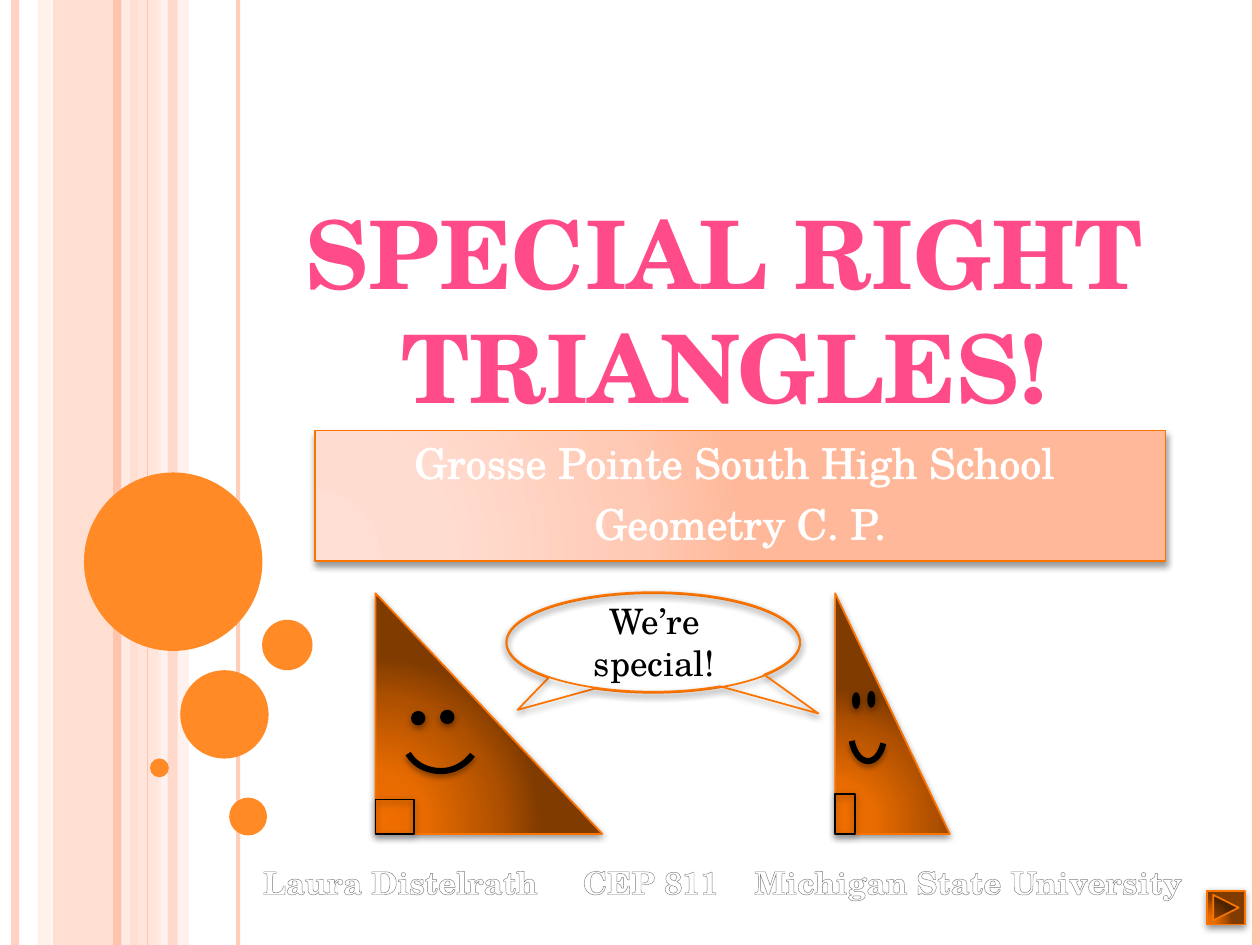
from lxml.etree import SubElement
from pptx import Presentation
from pptx.dml.color import RGBColor
from pptx.enum.shapes import MSO_CONNECTOR, MSO_SHAPE
from pptx.enum.text import MSO_ANCHOR, MSO_AUTO_SIZE, PP_ALIGN
from pptx.oxml import parse_xml
from pptx.oxml.ns import nsdecls, qn
from pptx.util import Pt

FONT = "TeX Gyre Schola"
ORANGE, DISC, BLACK, WHITE = "FB7400", "FF8A26", "000000", "FFFFFF"
HEIGHT = 540

# left, width, colour, opacity in percent
BANDS = [(30.24, 48.24, "FFC4AD", 54), (21.6, 7.92, "FFDACD", 36),
         (77.76, 14.4, "FFDACD", 70), (90, 18, "FFEDE8", 71),
         (95.76, 5.76, "FFC4AD", 51)]
# centre, line width, colour, opacity in percent
STRIPES = [(8.64, 4.5, "FFC4AD", 73), (72, 4.5, "FFEDE8", 83), (66.96, 4.5, "FFC4AD", 100),
           (136.08, 2.25, "FFC4AD", 82), (84.24, 0.75, "FFC4AD", 100),
           (717.84, 4.5, "FFC4AD", 100)]
# left, top, diameter
DISCS = [(48, 270, 102), (103, 383, 50.5), (85.7, 433.4, 10.8),
         (131, 455.8, 21.6), (149.8, 354.2, 28.8)]

PEACH = [(0, "FFDFD4"), (30, "FFDCD0"), (75, "FFCAB5"), (100, "FFB899")]
RUST = [(0, "F06E00"), (30, "E76B00"), (75, "AE5000"), (100, "803B00")]
PINK = [(0, "A40038"), (43, "FF4B89"), (48, "FF347A"), (100, "A40038")]
SILVER = [(0, WHITE), (9, WHITE), (50, "7F7F7F"), (79, WHITE), (100, WHITE)]

# opacity in percent, blur, distance
SOFT, PANEL, SMILE = (42, 4, 1.6), (40, 4, 2), (35, 3, 2)

TITLE = ["SPECIAL RIGHT ", "TRIANGLES!"]
SUBTITLE = ["Grosse Pointe South High School ", " Geometry C. P. "]
CREDIT = ["Laura Distelrath     CEP 811    Michigan State University"]
SPEECH = ["We’re special!"]

TRIANGLE_TOP, TRIANGLE_HEIGHT = 339, 137.5
# smile: start point, then two curves of two control points and an end point
TRIANGLES = [
    {"left": 214.6, "width": 129.6, "corner": (22, 19.7), "eye": (7.2, 7.2),
     "eyes": [(235.4, 406.8), (252, 406.1)],
     "smile": [(233.3, 430.6), (236.9, 437), (244.1, 440.6), (252, 440.6),
               (259.2, 440.6), (265.7, 437), (270, 431.3)]},
    {"left": 477.2, "width": 65.5, "corner": (11.2, 22.8), "eye": (3.6, 8.6),
     "eyes": [(487.4, 396), (496.1, 395.3)],
     "smile": [(486.7, 423.4), (488.2, 430.6), (491.8, 434.9), (496.1, 434.9),
               (499.7, 434.9), (503.3, 431.3), (504.7, 424.8)]},
]
# top, tail position relative to the centre
CALLOUTS = [(339, (-0.462, 0.672)), (338.4, (0.562, 0.718))]


def rgb(value):
    return RGBColor.from_string(value)


def gradient(stops, linear=False):
    """Return a gradFill element: top to bottom, or round from the lower left."""
    colours = "".join(f'<a:gs pos="{position * 1000}"><a:srgbClr val="{colour}"/></a:gs>'
                      for position, colour in stops)
    direction = ('<a:lin ang="5400000" scaled="0"/>' if linear else
                 '<a:path path="circle"><a:fillToRect l="5000" t="100000" '
                 'r="120000" b="10000"/></a:path>')
    return parse_xml(f'<a:gradFill {nsdecls("a")} rotWithShape="1">'
                     f'<a:gsLst>{colours}</a:gsLst>{direction}</a:gradFill>')


def set_opacity(element, percent):
    if percent < 100:
        colour = next(element.iter(qn("a:srgbClr")))
        SubElement(colour, qn("a:alpha"), val=str(percent * 1000))


def style(shape, fill=None, line=None, width=1, shadow=None, opacity=100):
    """Set fill (a colour, gradient stops or None), outline and shadow."""
    properties = shape._element.spPr
    if isinstance(fill, str):
        shape.fill.solid()
        shape.fill.fore_color.rgb = rgb(fill)
        set_opacity(properties, opacity)
    else:
        shape.fill.background()
        if fill:
            properties.replace(properties.find(qn("a:noFill")), gradient(fill))
    if line:
        shape.line.color.rgb = rgb(line)
        shape.line.width = Pt(width)
    else:
        shape.line.fill.background()
    shape.shadow.inherit = False
    if shadow:
        alpha, blur, distance = shadow
        outer = SubElement(properties.find(qn("a:effectLst")), qn("a:outerShdw"),
                           blurRad=str(Pt(blur)), dist=str(Pt(distance)),
                           dir="5400000", rotWithShape="0")
        SubElement(outer, qn("a:srgbClr"), val=BLACK)
        set_opacity(outer, alpha)


def add_shape(page, kind, left, top, width, height, **look):
    shape = page.shapes.add_shape(kind, Pt(left), Pt(top), Pt(width), Pt(height))
    style(shape, **look)
    return shape


def place(box, left, top, width, height):
    box.left, box.top, box.width, box.height = Pt(left), Pt(top), Pt(width), Pt(height)


def write(box, lines, size, colour=BLACK, bold=False, outline=None, align=PP_ALIGN.CENTER,
          before=0, wrap=True):
    """Fill a box with one paragraph a line; colour may be gradient stops."""
    frame = box.text_frame
    frame.word_wrap = wrap
    frame.auto_size = MSO_AUTO_SIZE.NONE
    frame.vertical_anchor = MSO_ANCHOR.TOP
    for index, line in enumerate(lines):
        para = frame.add_paragraph() if index else frame.paragraphs[0]
        para.alignment = align
        para.space_before = Pt(before)
        span = para.add_run()
        span.text = line
        span.font.name, span.font.size, span.font.bold = FONT, Pt(size), bold
        properties = span._r.get_or_add_rPr()
        if isinstance(colour, str):
            span.font.color.rgb = rgb(colour)
        else:
            properties.insert(0, gradient(colour, linear=True))
        if outline:
            edge, width = outline
            properties.insert(0, parse_xml(
                f'<a:ln {nsdecls("a")} w="{Pt(width)}"><a:solidFill>'
                f'<a:srgbClr val="{edge}"/></a:solidFill></a:ln>'))


def curve_points(points, steps=12):
    """Sample a chain of cubic Bezier curves."""
    sampled = [points[0]]
    for first in range(0, len(points) - 1, 3):
        corners = points[first:first + 4]
        for step in range(1, steps + 1):
            t = step / steps
            weights = ((1 - t) ** 3, 3 * t * (1 - t) ** 2, 3 * t ** 2 * (1 - t), t ** 3)
            sampled.append(tuple(sum(weight * corner[axis]
                                     for weight, corner in zip(weights, corners))
                                 for axis in (0, 1)))
    return [(Pt(x), Pt(y)) for x, y in sampled]


def add_triangle(page, left, width, corner, eye, eyes, smile):
    bottom = TRIANGLE_TOP + TRIANGLE_HEIGHT
    add_shape(page, MSO_SHAPE.RIGHT_TRIANGLE, left, TRIANGLE_TOP, width, TRIANGLE_HEIGHT,
              fill=RUST, line=ORANGE, shadow=SOFT)
    add_shape(page, MSO_SHAPE.RECTANGLE, left, bottom - corner[1], *corner,
              line=BLACK, shadow=SOFT)
    start, *rest = curve_points(smile)
    builder = page.shapes.build_freeform(*start)
    builder.add_line_segments(rest, close=False)
    style(builder.convert_to_shape(), line=BLACK, width=3.5, shadow=SMILE)
    for position in eyes:
        add_shape(page, MSO_SHAPE.OVAL, *position, *eye, fill=BLACK, line=BLACK, shadow=SOFT)


def add_background(page):
    for left, width, colour, opacity in BANDS:
        add_shape(page, MSO_SHAPE.RECTANGLE, left, 0, width, HEIGHT,
                  fill=colour, opacity=opacity)
    for x, width, colour, opacity in STRIPES:
        stripe = page.shapes.add_connector(MSO_CONNECTOR.STRAIGHT, Pt(x), 0, Pt(x), Pt(HEIGHT))
        stripe.line.color.rgb = rgb(colour)
        stripe.line.width = Pt(width)
        set_opacity(stripe._element.spPr, opacity)
        SubElement(stripe._element.spPr, qn("a:effectLst"))
    for left, top, diameter in DISCS:
        add_shape(page, MSO_SHAPE.OVAL, left, top, diameter, diameter, fill=DISC)


def main():
    deck = Presentation()
    deck.slide_width, deck.slide_height = Pt(720), Pt(HEIGHT)
    page = deck.slides.add_slide(deck.slide_layouts[0])
    add_background(page)

    subtitle = page.placeholders[1]
    place(subtitle, 180, 246, 486, 74.4)
    style(subtitle, fill=PEACH, line=ORANGE, shadow=PANEL)
    write(subtitle, SUBTITLE, 24, WHITE, outline=(WHITE, 1.45), before=6)
    title = page.shapes.title
    place(title, 165, 108, 497.5, 138)
    write(title, TITLE, 54, PINK, bold=True, outline=("BE3665", 0.71), wrap=False)
    credit = page.shapes.add_textbox(Pt(143.3), Pt(489.6), Pt(546.5), Pt(29))
    write(credit, CREDIT, 18, SILVER, bold=True, outline=("7D7D7D", 0.83),
          align=PP_ALIGN.LEFT, wrap=False)

    add_shape(page, MSO_SHAPE.ACTION_BUTTON_FORWARD_OR_NEXT, 689.8, 509, 21.6, 19.4,
              fill=RUST, line=ORANGE, shadow=SOFT)
    for triangle in TRIANGLES:
        add_triangle(page, **triangle)
    for top, tail in CALLOUTS:
        callout = add_shape(page, MSO_SHAPE.OVAL_CALLOUT, 289.4, top, 167.8, 56.9,
                            line=ORANGE, shadow=SOFT)
        callout.adjustments[0], callout.adjustments[1] = tail
    speech = page.shapes.add_textbox(Pt(314.6), Pt(339), Pt(118.8), Pt(55.4))
    write(speech, SPEECH, 20)
    deck.save("out.pptx")


if __name__ == "__main__":
    main()
